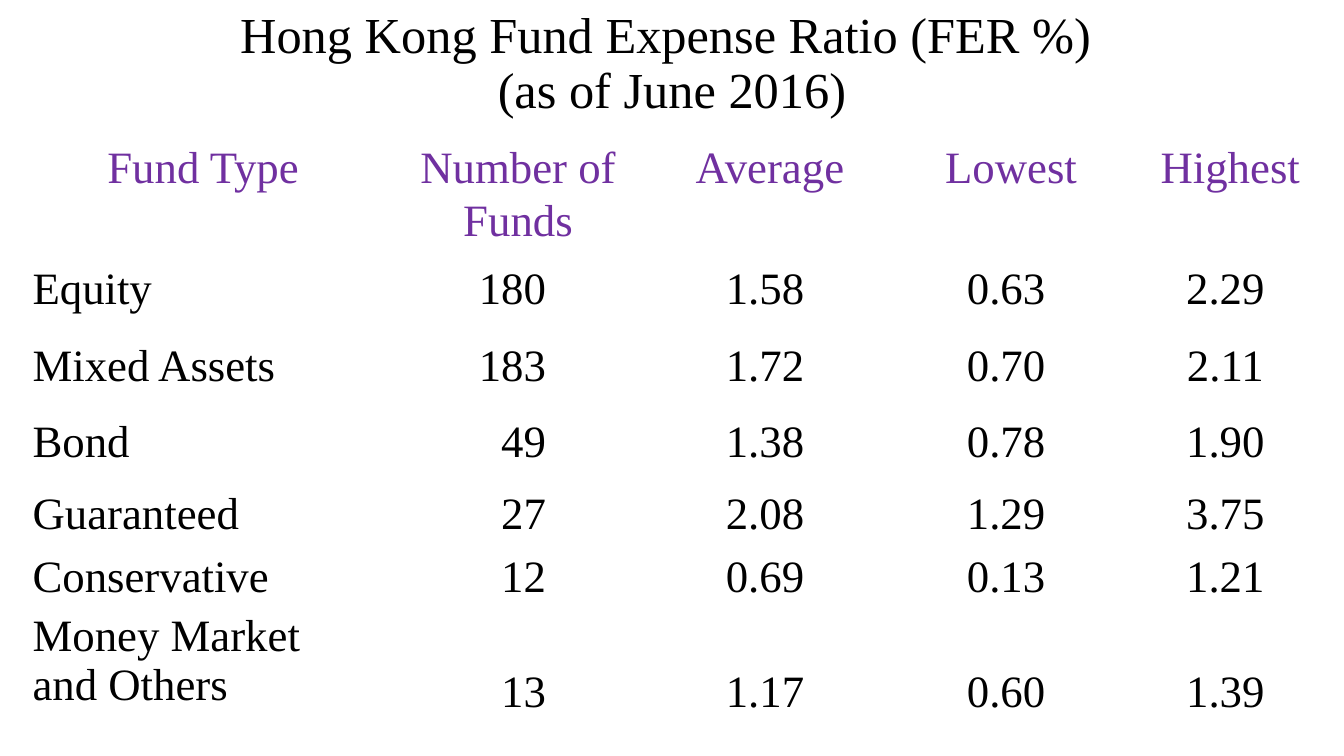
from lxml.etree import SubElement
from pptx import Presentation
from pptx.dml.color import RGBColor
from pptx.enum.text import MSO_ANCHOR, MSO_AUTO_SIZE, PP_ALIGN
from pptx.oxml import parse_xml
from pptx.oxml.ns import nsdecls, qn
from pptx.util import Cm, Pt

BLACK = RGBColor(0x00, 0x00, 0x00)
PURPLE = RGBColor(0x70, 0x30, 0xA0)
WHITE = RGBColor(0xFF, 0xFF, 0xFF)

HEADINGS = ["Fund Type", "Number of Funds", "Average", "Lowest", "Highest"]
FUNDS = [
    ["Equity", "180", "1.58", "0.63", "2.29"],
    ["Mixed Assets", "183", "1.72", "0.70", "2.11"],
    ["Bond", "49", "1.38", "0.78", "1.90"],
    ["Guaranteed", "27", "2.08", "1.29", "3.75"],
    ["Conservative", "12", "0.69", "0.13", "1.21"],
    ["Money Market\nand Others", "13", "1.17", "0.60", "1.39"],
]
COLUMN_WIDTHS = [9.27, 6.6, 6.1, 6.05, 5]
ROW_HEIGHTS = [3.12, 1.96, 1.9, 1.83, 1.57, 1.57, 2.92]
SIDE_MARGIN = 0.18


class FundSlide:
    """Holds the text style and the slide being filled."""

    font_name = "Times New Roman"
    title_size = Pt(36)
    table_size = Pt(32)

    def __init__(self, slide):
        self.slide = slide

    def add_run(self, paragraph, text, size, color):
        run = paragraph.add_run()
        run.text = text
        run.font.name = self.font_name
        run.font.size = size
        run.font.bold = False
        run.font.color.rgb = color

    def title(self, lines, left, top, width, height):
        heading = self.slide.shapes.title
        heading.left, heading.top = Cm(left), Cm(top)
        heading.width, heading.height = Cm(width), Cm(height)
        frame = heading.text_frame
        frame.word_wrap = True
        frame.auto_size = MSO_AUTO_SIZE.NONE
        frame.vertical_anchor = MSO_ANCHOR.MIDDLE
        paragraph = frame.paragraphs[0]
        paragraph.alignment = PP_ALIGN.CENTER
        paragraph.line_spacing = 0.9
        for number, line in enumerate(lines):
            if number:
                paragraph.add_line_break()
            self.add_run(paragraph, line, self.title_size, BLACK)

    def table(self, left, top, widths, heights):
        frame = self.slide.shapes.add_table(
            len(heights), len(widths), Cm(left), Cm(top),
            Cm(sum(widths)), Cm(sum(heights)))
        table = frame.table
        table.first_row = table.horz_banding = False
        for column, width in zip(table.columns, widths):
            column.width = Cm(width)
        for row, height in zip(table.rows, heights):
            row.height = Cm(height)
        return table

    def borders(self, cell, bottom_width):
        properties = cell._tc.get_or_add_tcPr()
        widths = {"lnL": 1, "lnR": 1, "lnT": 1, "lnB": bottom_width}
        for position, (side, width) in enumerate(widths.items()):
            line = parse_xml(f'<a:{side} {nsdecls("a")} w="{Pt(width)}"/>')
            fill = SubElement(line, qn("a:solidFill"))
            SubElement(fill, qn("a:srgbClr"), val=str(WHITE))
            properties.insert(position, line)

    def cell(self, cell, text, color=BLACK, align=PP_ALIGN.CENTER, spacing=1.07,
             anchor=MSO_ANCHOR.TOP, left=SIDE_MARGIN, right=SIDE_MARGIN,
             top=0, bottom=0, border=1):
        cell.fill.background()
        self.borders(cell, border)
        cell.vertical_anchor = anchor
        cell.margin_left, cell.margin_right = Cm(left), Cm(right)
        cell.margin_top, cell.margin_bottom = Cm(top), Cm(bottom)
        frame = cell.text_frame
        for number, line in enumerate(text.split("\n")):
            paragraph = frame.add_paragraph() if number else frame.paragraphs[0]
            paragraph.alignment = align
            paragraph.line_spacing = spacing
            self.add_run(paragraph, line, self.table_size, color)


def main():
    presentation = Presentation()
    presentation.slide_width, presentation.slide_height = Cm(33.87), Cm(19.05)
    page = FundSlide(presentation.slides.add_slide(presentation.slide_layouts[5]))

    # Title
    page.title(["Hong Kong Fund Expense Ratio (FER %) ", "(as of June 2016)"],
               2.33, 0, 29.21, 3.25)

    # Column headings
    ratios = page.table(0.36, 3.45, COLUMN_WIDTHS, ROW_HEIGHTS)
    for column, heading in enumerate(HEADINGS):
        page.cell(ratios.cell(0, column), heading, PURPLE,
                  left=0.43, top=0.08, border=3)

    # Fund rows: name, right-aligned count, then centred ratios
    for row, (fund, count, *values) in enumerate(FUNDS, 1):
        page.cell(ratios.cell(row, 0), fund, align=PP_ALIGN.LEFT, left=0.46,
                  spacing=1.0 if "\n" in fund else 1.07)
        is_last = row == len(FUNDS)
        placing = {"anchor": MSO_ANCHOR.BOTTOM, "bottom": 0.25} if is_last else {}
        page.cell(ratios.cell(row, 1), count, align=PP_ALIGN.RIGHT,
                  right=2.47, **placing)
        for column, value in enumerate(values, 2):
            page.cell(ratios.cell(row, column), value, **placing)

    presentation.save("out.pptx")


if __name__ == "__main__":
    main()
